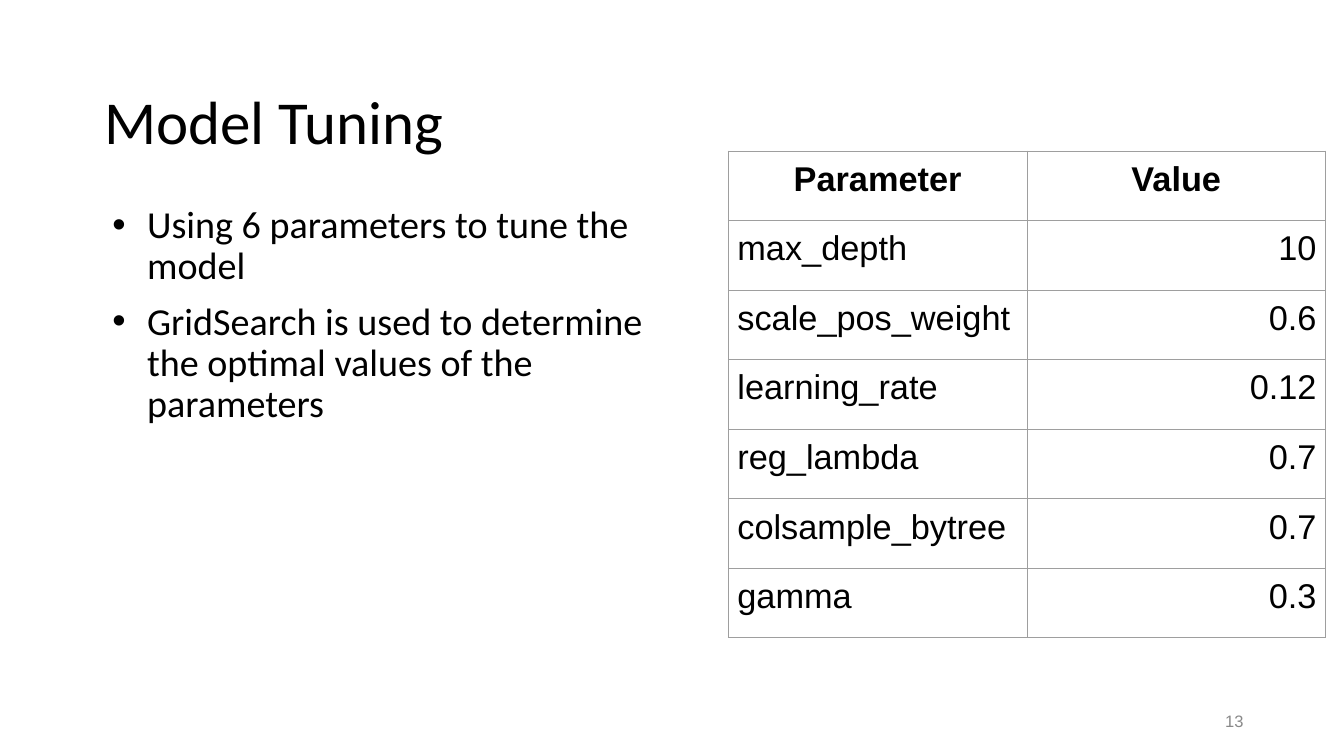
"""Builds the Model Tuning slide with its table of tuned parameters."""
import pptx
import pptx.dml.color
import pptx.enum.text
import pptx.oxml
import pptx.oxml.ns
import pptx.util
from pptx.util import Inches

BLACK = pptx.dml.color.RGBColor(0x00, 0x00, 0x00)
PAGE_GREY = pptx.dml.color.RGBColor(0x89, 0x89, 0x89)
BORDER_GREY = pptx.dml.color.RGBColor(0x9E, 0x9E, 0x9E)
ALIGN = pptx.enum.text.PP_ALIGN
NAMESPACE = pptx.oxml.ns.nsdecls("a")


def add_text_frame(left, top, width, height, margin_y):
    frame = slide.shapes.add_textbox(
        Inches(left), Inches(top), Inches(width), Inches(height)).text_frame
    frame.word_wrap = True
    frame.margin_left = frame.margin_right = Inches(0.1)
    frame.margin_top = frame.margin_bottom = Inches(margin_y)
    return frame


def add_run(paragraph, text, size, font_name, color=BLACK, bold=False):
    run = paragraph.add_run()
    run.text = text
    run.font.size = pptx.util.Pt(size)
    run.font.name = font_name
    run.font.color.rgb = color
    run.font.bold = bold


presentation = pptx.Presentation()
presentation.slide_width = Inches(14.69)
presentation.slide_height = Inches(8.26)
slide = presentation.slides.add_slide(presentation.slide_layouts[6])

title = add_text_frame(1.04, 0.81, 10.18, 1.01, 0.1)
add_run(title.paragraphs[0], "Model Tuning", 48, "Calibri")

parameters = [
    ("Parameter", "Value"),
    ("max_depth", "10"),
    ("scale_pos_weight", "0.6"),
    ("learning_rate", "0.12"),
    ("reg_lambda", "0.7"),
    ("colsample_bytree", "0.7"),
    ("gamma", "0.3"),
]
parameter_table = slide.shapes.add_table(
    len(parameters), 2, Inches(7.96), Inches(1.65), Inches(6.53), Inches(5.32)).table
parameter_table.first_row = False
parameter_table.horz_banding = False
for row_index, entries in enumerate(parameters):
    is_header = row_index == 0
    for column_index, entry in enumerate(entries):
        cell = parameter_table.cell(row_index, column_index)
        cell.margin_left = cell.margin_right = Inches(0.1)
        cell.margin_top = cell.margin_bottom = Inches(0.1)
        cell.fill.background()
        paragraph = cell.text_frame.paragraphs[0]
        paragraph.alignment = ALIGN.CENTER if is_header else (ALIGN.LEFT, ALIGN.RIGHT)[column_index]
        add_run(paragraph, entry, 27, "Arial", bold=is_header)
        cell_properties = cell._tc.get_or_add_tcPr()
        for position, side in enumerate(("lnL", "lnR", "lnT", "lnB")):
            cell_properties.insert(position, pptx.oxml.parse_xml(
                f'<a:{side} {NAMESPACE} w="{pptx.util.Pt(0.75)}"><a:solidFill>'
                f'<a:srgbClr val="{BORDER_GREY}"/></a:solidFill></a:{side}>'))

points = [
    "Using 6 parameters to tune the model",
    "GridSearch is used to determine the optimal values of the parameters",
]
tuning_notes = add_text_frame(1.01, 2.2, 6.24, 5.24, 0.05)
for index, point in enumerate(points):
    paragraph = tuning_notes.paragraphs[0] if index == 0 else tuning_notes.add_paragraph()
    properties = paragraph._p.get_or_add_pPr()
    properties.set("marL", str(Inches(0.5)))
    properties.set("indent", str(Inches(-0.38)))
    properties.append(pptx.oxml.parse_xml(
        f'<a:buClr {NAMESPACE}><a:srgbClr val="{BLACK}"/></a:buClr>'))
    properties.append(pptx.oxml.parse_xml(f'<a:buFont {NAMESPACE} typeface="Arial"/>'))
    properties.append(pptx.oxml.parse_xml(f'<a:buChar {NAMESPACE} char="•"/>'))
    paragraph.line_spacing = 0.9
    paragraph.space_before = pptx.util.Pt(11 if index else 0)
    add_run(paragraph, point, 30, "Calibri")

page_number = add_text_frame(10.38, 7.66, 3.31, 0.44, 0.05)
page_number.vertical_anchor = pptx.enum.text.MSO_ANCHOR.MIDDLE
page_number.paragraphs[0].alignment = ALIGN.RIGHT
add_run(page_number.paragraphs[0], "13", 13, "Arial", PAGE_GREY)

presentation.save("out.pptx")
